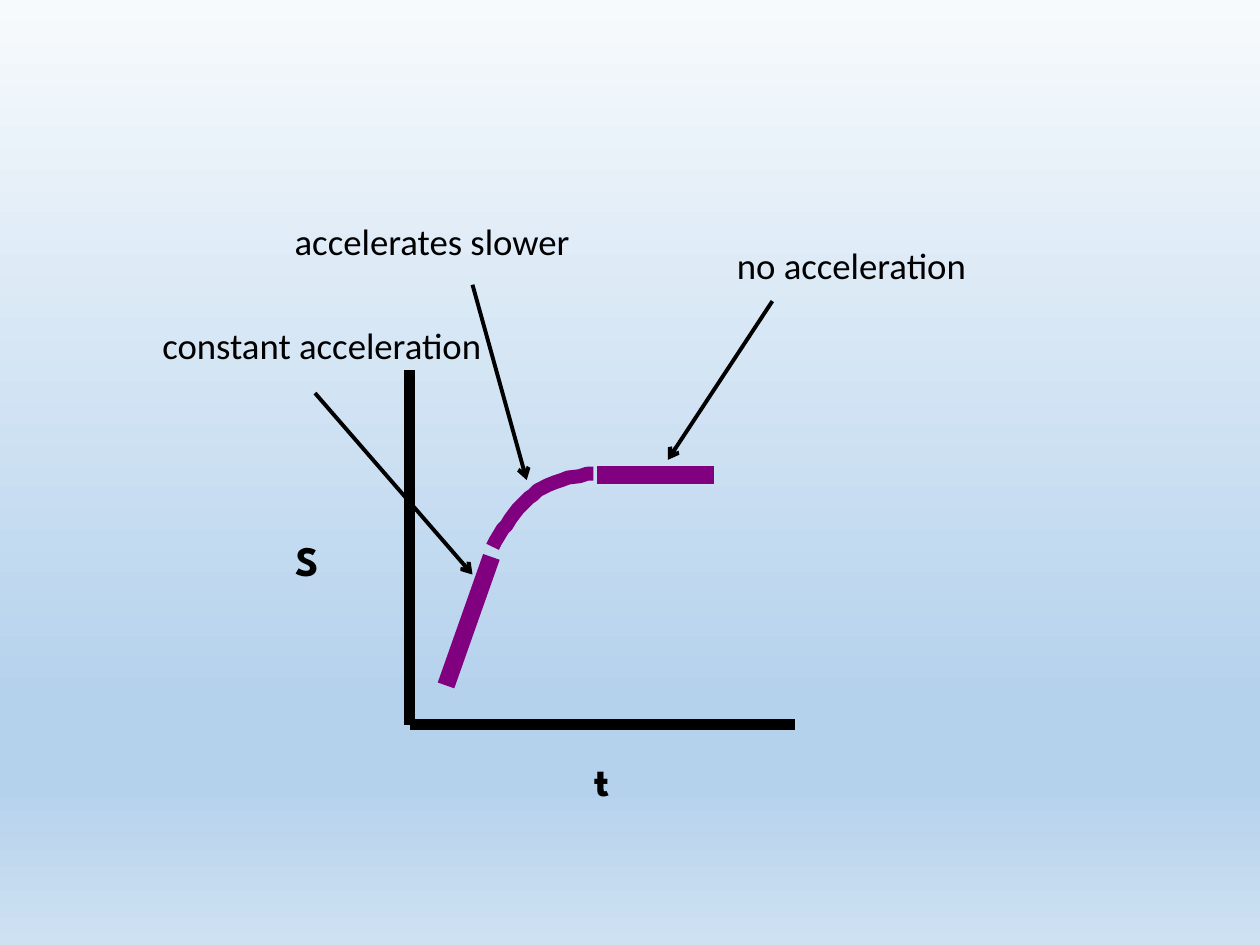
from copy import deepcopy

from lxml import etree
from pptx import Presentation
from pptx.dml.color import RGBColor
from pptx.enum.shapes import MSO_CONNECTOR
from pptx.enum.text import MSO_AUTO_SIZE
from pptx.oxml.ns import qn
from pptx.util import Pt

STRAIGHT = MSO_CONNECTOR.STRAIGHT
GROW = MSO_AUTO_SIZE.SHAPE_TO_FIT_TEXT
EMU_PER_PX = 9144
BLACK = "000000"
PURPLE = "800080"


def px(length):
    return length * EMU_PER_PX


def color(hex_code):
    return RGBColor.from_string(hex_code)


def write(frame, text, font="Calibri", size=21, bold=False, hex_code=BLACK):
    run = frame.paragraphs[0].add_run()
    run.text = text
    run.font.name = font
    run.font.size = Pt(size)
    run.font.bold = bold
    run.font.color.rgb = color(hex_code)


class GraphSlide:
    def __init__(self, slide):
        self.slide = slide

    def background(self, stops):
        fill = self.slide.background.fill
        fill.gradient()
        fill.gradient_angle = 270
        stop_list = next(self.slide.element.iter(qn("a:gsLst")))
        while len(stop_list) < len(stops):
            stop_list.append(deepcopy(stop_list[0]))
        for stop, (position, hex_code) in zip(fill.gradient_stops, stops):
            stop.position = position
            for old in list(stop_list[fill_index(stops, position)]):
                old.getparent().remove(old)
            etree.SubElement(stop_list[fill_index(stops, position)],
                             qn("a:srgbClr"), val=hex_code)

    def stroke(self, shape, hex_code, width):
        shape.line.color.rgb = color(hex_code)
        shape.line.width = Pt(width)

    def line(self, start, end, width, hex_code=BLACK, arrow=False):
        connector = self.slide.shapes.add_connector(
            STRAIGHT, *map(px, start + end))
        self.stroke(connector, hex_code, width)
        if arrow:
            etree.SubElement(connector.line._get_or_add_ln(),
                             qn("a:tailEnd"), type="arrow")
        etree.SubElement(connector.element.spPr, qn("a:effectLst"))

    def curve(self, points, width, hex_code):
        builder = self.slide.shapes.build_freeform(*points[0], scale=EMU_PER_PX)
        builder.add_line_segments(points[1:], close=False)
        shape = builder.convert_to_shape()
        shape.shadow.inherit = False
        shape.fill.background()
        self.stroke(shape, hex_code, width)

    def label(self, box, text, **style):
        frame = self.slide.shapes.add_textbox(*map(px, box)).text_frame
        frame.word_wrap = True
        frame.auto_size = GROW
        write(frame, text, **style)


def fill_index(stops, position):
    return [place for place, _ in stops].index(position)


def main():
    deck = Presentation()
    deck.slide_width, deck.slide_height = px(1000), px(750)
    graph = GraphSlide(deck.slides.add_slide(deck.slide_layouts[6]))
    graph.background([(0, "F7FAFD"), (0.74, "B5D2EC"),
                      (0.83, "B5D2EC"), (1, "CEE1F2")])

    phases = [
        ("constant acceleration", (119, 251, 280, 45), (250, 312), (375, 456)),
        ("accelerates slower", (224, 169, 252, 45), (375, 226), (418, 381)),
        ("no acceleration", (575, 188, 219, 45), (613, 239), (530, 365)),
    ]
    for text, box, start, end in phases:
        graph.line(start, end, 2.25, arrow=True)
        graph.label(box, text)

    axis_origin = (325, 575)
    graph.line((325, 294), axis_origin, 6)
    graph.line(axis_origin, (631, 575), 6)
    for text, left, top in [("S", 225, 419), ("t", 462, 594)]:
        graph.label((left, top, 38, 50), text,
                    font="League Spartan", size=24, bold=True)

    graph.line((354, 544), (390, 442), 10, PURPLE)
    slowing_phase = [
        (391, 434), (393, 430), (396, 425), (399, 420), (402, 417),
        (405, 412), (408, 408), (411, 404), (414, 401), (417, 398),
        (420, 395), (423, 393), (427, 389), (431, 387), (435, 385),
        (440, 383), (446, 381), (451, 379), (460, 378), (466, 376),
        (471, 376),
    ]
    graph.curve(slowing_phase, 8, PURPLE)
    graph.line((474, 377), (567, 377), 10, PURPLE)

    deck.save("out.pptx")


if __name__ == "__main__":
    main()
